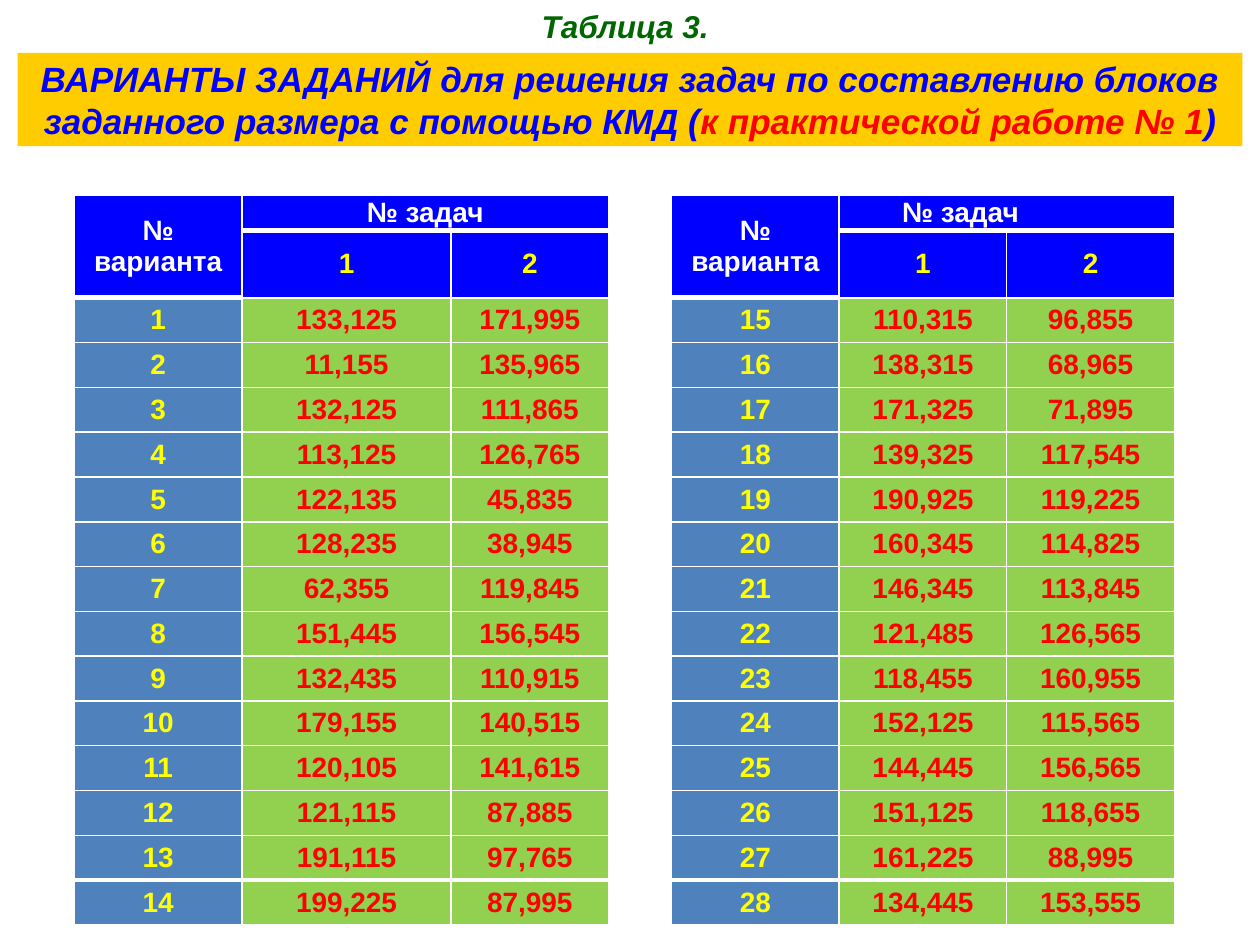
from pptx import Presentation
from pptx import util as u
from pptx.dml.color import RGBColor
from pptx.enum import text
from pptx.oxml import parse_xml
from pptx.oxml.ns import nsdecls

THEME = {
    "font": "Arial",
    "title": 20, "caption": 18, "table": 16,
    "band": "FFCC00", "blue": "0000FF", "red": "FF0000", "yellow": "FFFF00",
    "white": "FFFFFF", "dark_green": "006600", "steel": "4F81BD", "lime": "92D050",
}

CAPTION = "Таблица 3."
TITLE = [
    ("ВАРИАНТЫ ЗАДАНИЙ для решения задач по составлению блоков", "blue"),
    None,
    ("заданного размера с помощью КМД (", "blue"),
    ("к практической работе № 1", "red"),
    (")", "blue"),
]
VARIANT_HEADER = ["№", "варианта"]
TASKS_HEADER = "№ задач"
TASKS = ["1", "2"]

TABLES = [
    {
        "left": 0.59, "columns": [1.33, 1.66, 1.25], "subheader": 0.49,
        "tasks_align": text.PP_ALIGN.CENTER, "tasks_margin": 0.07,
        "first": 1,
        "values": [
            ("133,125", "171,995"), ("11,155", "135,965"), ("132,125", "111,865"),
            ("113,125", "126,765"), ("122,135", "45,835"), ("128,235", "38,945"),
            ("62,355", "119,845"), ("151,445", "156,545"), ("132,435", "110,915"),
            ("179,155", "140,515"), ("120,105", "141,615"), ("121,115", "87,885"),
            ("191,115", "97,765"), ("199,225", "87,995"),
        ],
    },
    {
        "left": 5.33, "columns": [1.33, 1.33, 1.33], "subheader": 0.53,
        "tasks_align": text.PP_ALIGN.LEFT, "tasks_margin": 0.5,
        "first": 15,
        "values": [
            ("110,315", "96,855"), ("138,315", "68,965"), ("171,325", "71,895"),
            ("139,325", "117,545"), ("190,925", "119,225"), ("160,345", "114,825"),
            ("146,345", "113,845"), ("121,485", "126,565"), ("118,455", "160,955"),
            ("152,125", "115,565"), ("144,445", "156,565"), ("151,125", "118,655"),
            ("161,225", "88,995"), ("134,445", "153,555"),
        ],
    },
]
TABLE_TOP, HEADER_HEIGHT, BODY_HEIGHT = 1.55, 0.28, 4.98
THIN, THICK = 1, 3


def color(name):
    return RGBColor.from_string(THEME[name])


def add_span(para, words, size="table", ink="white", italic=False):
    span = para.add_run()
    span.text = words
    font = span.font
    font.name, font.size = THEME["font"], u.Pt(THEME[size])
    font.bold, font.italic = True, italic
    font.color.rgb = color(ink)


def set_borders(cell, top, bottom):
    """White borders; sides are thin, top and bottom have the given widths."""
    properties = cell._tc.get_or_add_tcPr()
    for side, width in (("L", THIN), ("R", THIN), ("T", top), ("B", bottom)):
        properties.append(parse_xml(
            f'<a:ln{side} {nsdecls("a")} w="{u.Pt(width)}"><a:solidFill>'
            f'<a:srgbClr val="{THEME["white"]}"/></a:solidFill></a:ln{side}>'))


def fill_cell(cell, lines, ink, fill, align=text.PP_ALIGN.CENTER, margin=0.07):
    cell.fill.solid()
    cell.fill.fore_color.rgb = color(fill)
    cell.vertical_anchor = text.MSO_ANCHOR.MIDDLE
    cell.margin_left, cell.margin_right = u.Inches(margin), u.Inches(0.07)
    cell.margin_top = cell.margin_bottom = 0
    frame = cell.text_frame
    for index, line in enumerate(lines):
        para = frame.add_paragraph() if index else frame.paragraphs[0]
        para.alignment = align
        add_span(para, line, ink=ink)


def add_variants(page, data):
    values = data["values"]
    row_count, column_count = len(values) + 2, len(data["columns"])
    heights = [HEADER_HEIGHT, data["subheader"]]
    heights += [BODY_HEIGHT / len(values)] * len(values)
    table = page.shapes.add_table(
        row_count, column_count, u.Inches(data["left"]), u.Inches(TABLE_TOP),
        u.Inches(sum(data["columns"])), u.Inches(sum(heights))).table
    table.first_row = table.horz_banding = False
    for column, width in zip(table.columns, data["columns"]):
        column.width = u.Inches(width)
    for row, height in zip(table.rows, heights):
        row.height = u.Inches(height)

    table.cell(0, 0).merge(table.cell(1, 0))
    table.cell(0, 1).merge(table.cell(0, 2))

    def rule_below(row, column):
        header_end = 1 if column == 0 else 0
        return THICK if row in (header_end, row_count - 2) else THIN

    for row in range(row_count):
        for column in range(column_count):
            cell = table.cell(row, column)
            bottom = THICK if row == 0 else rule_below(row, column)
            set_borders(cell, rule_below(row - 1, column), bottom)

    fill_cell(table.cell(0, 0), VARIANT_HEADER, "white", "blue")
    fill_cell(table.cell(0, 1), [TASKS_HEADER], "white", "blue",
              data["tasks_align"], data["tasks_margin"])
    for column, task in enumerate(TASKS, 1):
        fill_cell(table.cell(1, column), [task], "yellow", "blue")
    for row, pair in enumerate(values, 2):
        number = str(data["first"] + row - 2)
        fill_cell(table.cell(row, 0), [number], "yellow", "steel")
        for column, value in enumerate(pair, 1):
            fill_cell(table.cell(row, column), [value], "red", "lime")


def add_title(page):
    box = page.shapes.title
    box.left, box.top = u.Inches(0.14), u.Inches(0.42)
    box.width, box.height = u.Inches(9.72), u.Inches(0.74)
    box.fill.solid()
    box.fill.fore_color.rgb = color("band")
    frame = box.text_frame
    frame.word_wrap = True
    frame.auto_size = text.MSO_AUTO_SIZE.NONE
    frame.vertical_anchor = text.MSO_ANCHOR.MIDDLE
    para = frame.paragraphs[0]
    para.alignment = text.PP_ALIGN.CENTER
    for part in TITLE:
        if part is None:
            para.add_line_break()
        else:
            add_span(para, part[0], "title", part[1], italic=True)


def add_caption(page):
    box = page.shapes.add_textbox(
        u.Inches(4.2), u.Inches(0.01), u.Inches(1.61), u.Inches(0.4))
    frame = box.text_frame
    frame.word_wrap = False
    frame.auto_size = text.MSO_AUTO_SIZE.SHAPE_TO_FIT_TEXT
    add_span(frame.paragraphs[0], CAPTION, "caption", "dark_green", italic=True)


def main():
    deck = Presentation()
    deck.slide_width, deck.slide_height = u.Inches(10), u.Inches(7.5)
    page = deck.slides.add_slide(deck.slide_layouts[5])
    add_title(page)
    add_caption(page)
    for data in TABLES:
        add_variants(page, data)
    deck.save("out.pptx")


if __name__ == "__main__":
    main()
